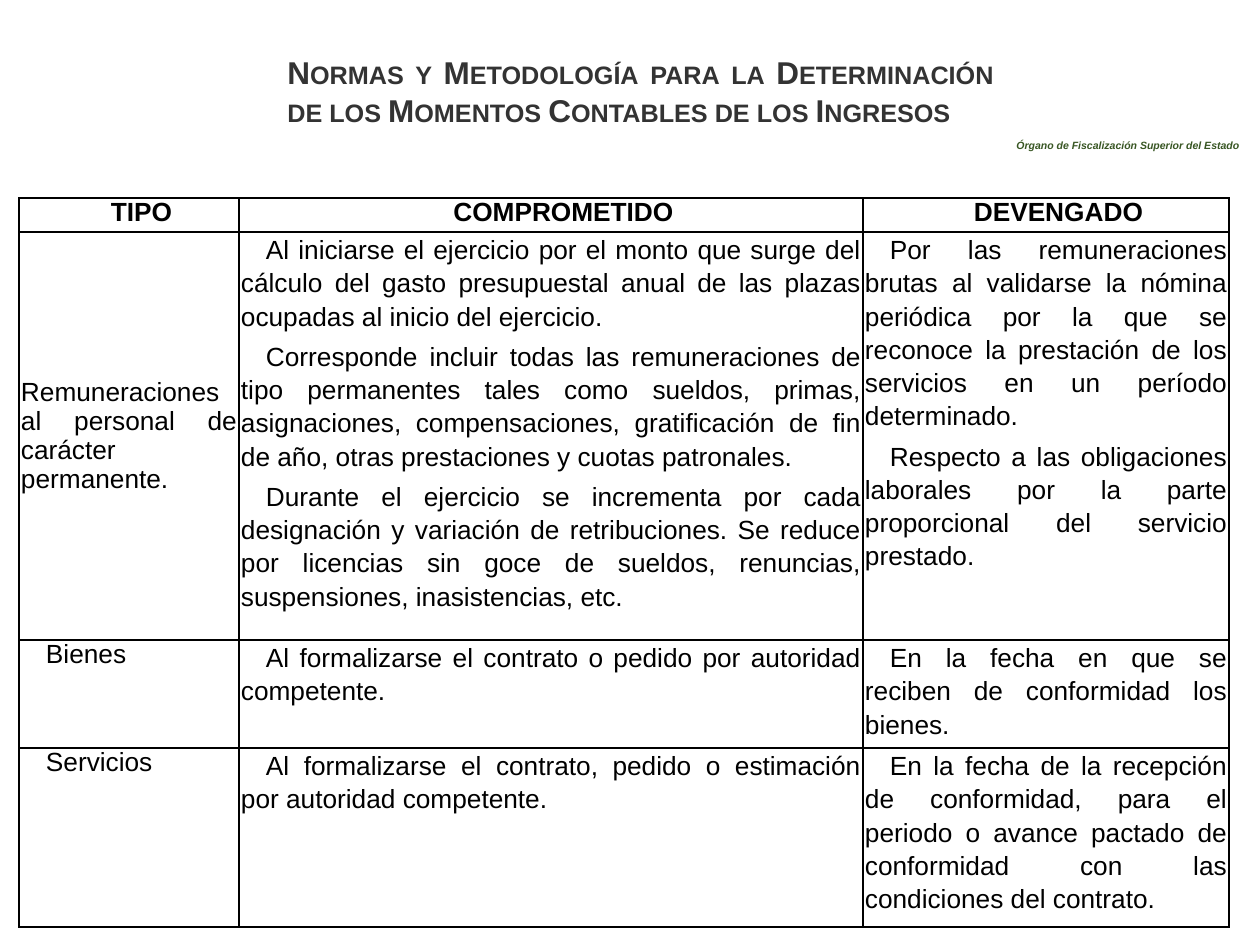
from lxml import etree
from pptx import Presentation
from pptx import util as u
from pptx.dml.color import RGBColor
from pptx.enum import shapes, text
from pptx.oxml.ns import qn

PX = 914400 / 126
FONT = "Arial"
BLACK = RGBColor(0x00, 0x00, 0x00)
WHITE = RGBColor(0xFF, 0xFF, 0xFF)
GREY = RGBColor(0x33, 0x33, 0x33)
GREEN = RGBColor(0x38, 0x56, 0x23)

CENTER = text.PP_ALIGN.CENTER
JUSTIFY = text.PP_ALIGN.JUSTIFY
INDENT = 25
COLUMNS = (220, 624, 366)
ROWS = (34, 408, 108, 179)

HEADINGS = ("TIPO", "COMPROMETIDO", "DEVENGADO")
MOMENTS = (
    ("Remuneraciones al personal de carácter permanente.",
     ("Al iniciarse el ejercicio por el monto que surge del cálculo del gasto "
      "presupuestal anual de las plazas ocupadas al inicio del ejercicio.",
      "Corresponde incluir todas las remuneraciones de tipo permanentes tales como "
      "sueldos, primas, asignaciones, compensaciones, gratificación de fin de año, "
      "otras prestaciones y cuotas patronales.",
      "Durante el ejercicio se incrementa por cada designación y variación de "
      "retribuciones. Se reduce por licencias sin goce de sueldos, renuncias, "
      "suspensiones, inasistencias, etc."),
     ("Por las remuneraciones brutas al validarse la nómina periódica por la que se "
      "reconoce la prestación de los servicios en un período determinado.",
      "Respecto a las obligaciones laborales por la parte proporcional del servicio "
      "prestado.")),
    ("Bienes",
     ("Al formalizarse el contrato o pedido por autoridad competente.",),
     ("En la fecha en que se reciben de conformidad los bienes.",)),
    ("Servicios",
     ("Al formalizarse el contrato, pedido o estimación por autoridad competente.",),
     ("En la fecha de la recepción de conformidad, para el periodo o avance pactado "
      "de conformidad con las condiciones del contrato.",)),
)


def px(count):
    return u.Emu(round(count * PX))


def apply(target, formats):
    for name, value in formats.items():
        setattr(target, name, value)


def write(para, words, color, font, layout):
    apply(para, layout)
    span = para.add_run()
    span.text = words
    apply(span.font, {"name": FONT, **font})
    span.font.color.rgb = color
    return span


def add_title(page, left, top, width, height):
    box = page.shapes.add_textbox(px(left), px(top), px(width), px(height))
    box.text_frame.word_wrap = True
    span = write(box.text_frame.paragraphs[0],
                 "Normas y Metodología para la Determinación de los Momentos "
                 "Contables de los Ingresos",
                 GREY, {"size": u.Pt(18), "bold": True}, {"alignment": JUSTIFY})
    span.font._element.set("cap", "small")


def add_agency_label(page, left, top, width, height):
    box = page.shapes.add_shape(shapes.MSO_SHAPE.RECTANGLE,
                                px(left), px(top), px(width), px(height))
    box.shadow.inherit = False
    box.fill.solid()
    box.fill.fore_color.rgb = WHITE
    box.line.fill.background()
    apply(box.text_frame, {"word_wrap": True,
                           "vertical_anchor": text.MSO_ANCHOR.MIDDLE})
    write(box.text_frame.paragraphs[0], "Órgano de Fiscalización Superior del Estado",
          GREEN, {"size": u.Pt(6), "bold": True, "italic": True},
          {"alignment": text.PP_ALIGN.LEFT})


def add_borders(cell):
    """Draw a thin black line on all four sides of a cell."""
    properties = cell._tc.get_or_add_tcPr()
    for side in ("a:lnL", "a:lnR", "a:lnT", "a:lnB"):
        line = etree.SubElement(properties, qn(side), w=str(u.Pt(1)))
        fill = etree.SubElement(line, qn("a:solidFill"))
        etree.SubElement(fill, qn("a:srgbClr"), val=str(BLACK))


def fill_cell(cell, paragraphs, align=JUSTIFY, indent=INDENT, spacing=None,
              bold=False, anchor=text.MSO_ANCHOR.TOP):
    apply(cell, {"margin_left": px(2), "margin_right": px(2),
                 "margin_top": 0, "margin_bottom": 0, "vertical_anchor": anchor})
    add_borders(cell)
    cell.fill.background()
    frame = cell.text_frame
    for index, words in enumerate(paragraphs):
        para = frame.add_paragraph() if index else frame.paragraphs[0]
        properties = para._p.get_or_add_pPr()
        properties.set("marL", "0")
        properties.set("indent", str(px(indent)))
        write(para, words, BLACK, {"size": u.Pt(15), "bold": bold},
              {"alignment": align, "line_spacing": spacing,
               "space_before": u.Pt(2 if index else 0), "space_after": u.Pt(2)})


def add_moments_table(page, left, top):
    table = page.shapes.add_table(len(ROWS), len(COLUMNS), px(left), px(top),
                                  px(sum(COLUMNS)), px(sum(ROWS))).table
    apply(table, {"first_row": False, "horz_banding": False})
    for column, width in zip(table.columns, COLUMNS):
        column.width = px(width)
    for row, height in zip(table.rows, ROWS):
        row.height = px(height)

    for column, heading in enumerate(HEADINGS):
        fill_cell(table.cell(0, column), [heading], align=CENTER, bold=True)
    for row, (kind, *details) in enumerate(MOMENTS, start=1):
        kind_format = ({"indent": 0, "anchor": text.MSO_ANCHOR.MIDDLE}
                       if row == 1 else {})
        fill_cell(table.cell(row, 0), [kind], **kind_format)
        for column, paragraphs in enumerate(details, start=1):
            fill_cell(table.cell(row, column), paragraphs, spacing=1.14)


def main():
    deck = Presentation()
    apply(deck, {"slide_width": px(1260), "slide_height": px(945)})
    page = deck.slides.add_slide(deck.slide_layouts[6])
    add_agency_label(page, 1004, 132, 256, 26)
    add_moments_table(page, 19, 198)
    add_title(page, 275, 47, 731, 89)
    deck.save("out.pptx")


if __name__ == "__main__":
    main()
